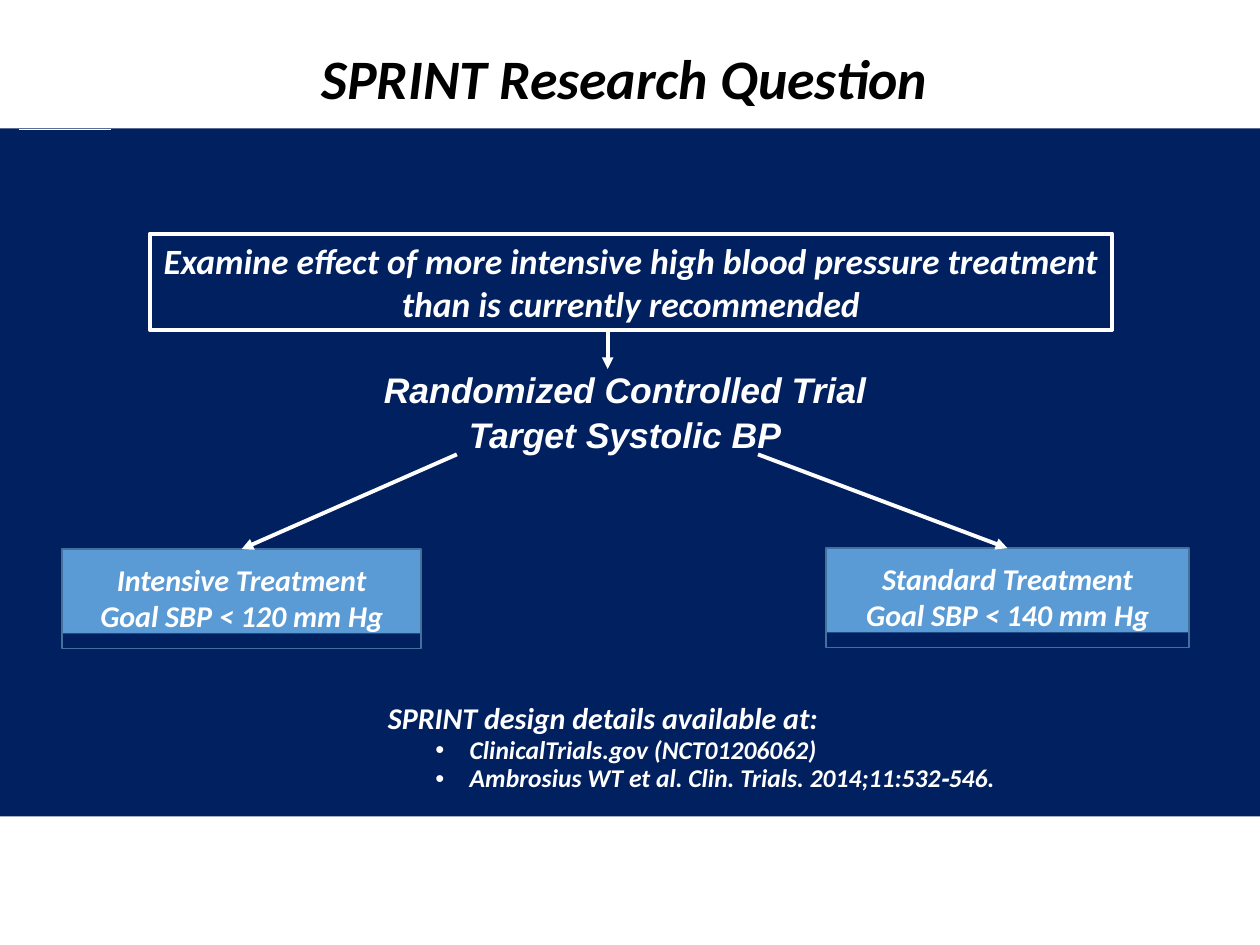
from lxml.etree import SubElement
from pptx import Presentation
from pptx.dml.color import RGBColor
from pptx.enum.shapes import MSO_CONNECTOR, MSO_SHAPE
from pptx.enum.text import MSO_ANCHOR, PP_ALIGN
from pptx.oxml.ns import qn
from pptx.util import Cm, Pt

NAVY = RGBColor(0x00, 0x20, 0x60)
BLUE = RGBColor(0x5B, 0x9B, 0xD5)
EDGE = RGBColor(0x41, 0x71, 0x9C)
WHITE = RGBColor(0xFF, 0xFF, 0xFF)
PALE = RGBColor(0xFB, 0xFF, 0xFF)
BLACK = RGBColor(0x00, 0x00, 0x00)


def set_frame(tf, anchor, left=0, top=0):
    tf.word_wrap = True
    tf.vertical_anchor = anchor
    tf.margin_left, tf.margin_top = Cm(left), Cm(top)
    tf.margin_right = tf.margin_bottom = 0


def add_run(p, text, size, color=WHITE, font="Calibri"):
    r = p.add_run()
    r.text = text
    r.font.size = Pt(size)
    r.font.name = font
    r.font.bold = r.font.italic = True
    r.font.color.rgb = color


def add_lines(tf, lines, size, font="Calibri", spacing=1.0):
    for i, line in enumerate(lines):
        p = tf.paragraphs[0] if i == 0 else tf.add_paragraph()
        p.alignment = PP_ALIGN.CENTER
        p.line_spacing = spacing
        add_run(p, line, size, font=font)


def add_rect(s, x, y, w, h, fill=None, line=None, width=0.75):
    sp = s.shapes.add_shape(MSO_SHAPE.RECTANGLE, Cm(x), Cm(y), Cm(w), Cm(h))
    sp.shadow.inherit = False
    if fill is None:
        sp.fill.background()
    else:
        sp.fill.solid()
        sp.fill.fore_color.rgb = fill
    if line is None:
        sp.line.fill.background()
    else:
        sp.line.color.rgb = line
        sp.line.width = Pt(width)
    return sp


def add_line(s, x1, y1, x2, y2, color=WHITE, width=2.25, arrow=True):
    cn = s.shapes.add_connector(
        MSO_CONNECTOR.STRAIGHT, Cm(x1), Cm(y1), Cm(x2), Cm(y2))
    cn.line.color.rgb = color
    cn.line.width = Pt(width)
    if arrow:
        SubElement(cn.line._get_or_add_ln(), qn("a:tailEnd"), type="triangle")
    SubElement(cn._element.spPr, qn("a:effectLst"))
    return cn


def add_textbox(s, x, y, w, h):
    tf = s.shapes.add_textbox(Cm(x), Cm(y), Cm(w), Cm(h)).text_frame
    set_frame(tf, MSO_ANCHOR.TOP)
    return tf


def add_title(s, text):
    sp = s.shapes.title
    sp.left, sp.top, sp.width, sp.height = Cm(1.98), Cm(0.79), Cm(20.17), Cm(1.47)
    set_frame(sp.text_frame, MSO_ANCHOR.TOP, left=4.5, top=0.1)
    p = sp.text_frame.paragraphs[0]
    p.alignment = PP_ALIGN.LEFT
    p.line_spacing = 1.0
    add_run(p, text, 31.8, BLACK)


def add_treatment(s, x, y, w, lines):
    sp = add_rect(s, x, y, w, 1.7, BLUE)
    set_frame(sp.text_frame, MSO_ANCHOR.MIDDLE, top=0.25)
    add_lines(sp.text_frame, lines, 17.2)
    return add_rect(s, x, y, w, 2.01, line=EDGE)


def add_references(s, heading, items):
    tf = add_textbox(s, 7.82, 14.17, 13, 1.83)
    p = tf.paragraphs[0]
    p.line_spacing = 0.93
    add_run(p, heading, 17.2)
    for item in items:
        p = tf.add_paragraph()
        pPr = p._p.get_or_add_pPr()
        pPr.set("marL", str(Cm(1.65)))
        pPr.set("indent", str(Cm(-0.69)))
        SubElement(pPr, qn("a:buFont"), typeface="Arial")
        SubElement(pPr, qn("a:buChar"), char="•")
        p.line_spacing = 0.93
        add_run(p, item, 14.6)


def main():
    prs = Presentation()
    prs.slide_width, prs.slide_height = Cm(25.4), Cm(19.05)
    s = prs.slides.add_slide(prs.slide_layouts[5])
    add_rect(s, 0, 2.59, 25.4, 13.87, NAVY)
    add_line(s, 0.38, 2.61, 2.23, 2.61, PALE, 0.25, arrow=False)
    add_title(s, "SPRINT Research Question")

    question = add_rect(s, 3.02, 4.71, 19.4, 1.94, line=WHITE, width=2.25)
    set_frame(question.text_frame, MSO_ANCHOR.MIDDLE)
    add_lines(question.text_frame,
              ["Examine effect of more intensive high blood pressure treatment",
               "than is currently recommended"], 20.3)
    add_line(s, 12.25, 6.65, 12.25, 7.44)
    add_lines(add_textbox(s, 7.3, 7.38, 10.6, 1.75),
              ["Randomized Controlled Trial", "Target Systolic BP"],
              20.3, "Arial", 1.05)

    arms = [
        ("Intensive", 120, 1.25, 11.07, 7.24, 9.21),
        ("Standard", 140, 16.65, 11.05, 7.32, 15.28),
    ]
    for name, goal, x, y, w, start in arms:
        box = add_treatment(
            s, x, y, w, [f"{name} Treatment", f"Goal SBP < {goal} mm Hg"])
        arrow = add_line(s, start, 9.16, x + w / 2, y)
        arrow.end_connect(box, 0)

    add_references(s, "SPRINT design details available at:",
                   ["ClinicalTrials.gov (NCT01206062)",
                    "Ambrosius WT et al. Clin. Trials. 2014;11:532‐546."])
    prs.save("out.pptx")


if __name__ == "__main__":
    main()
